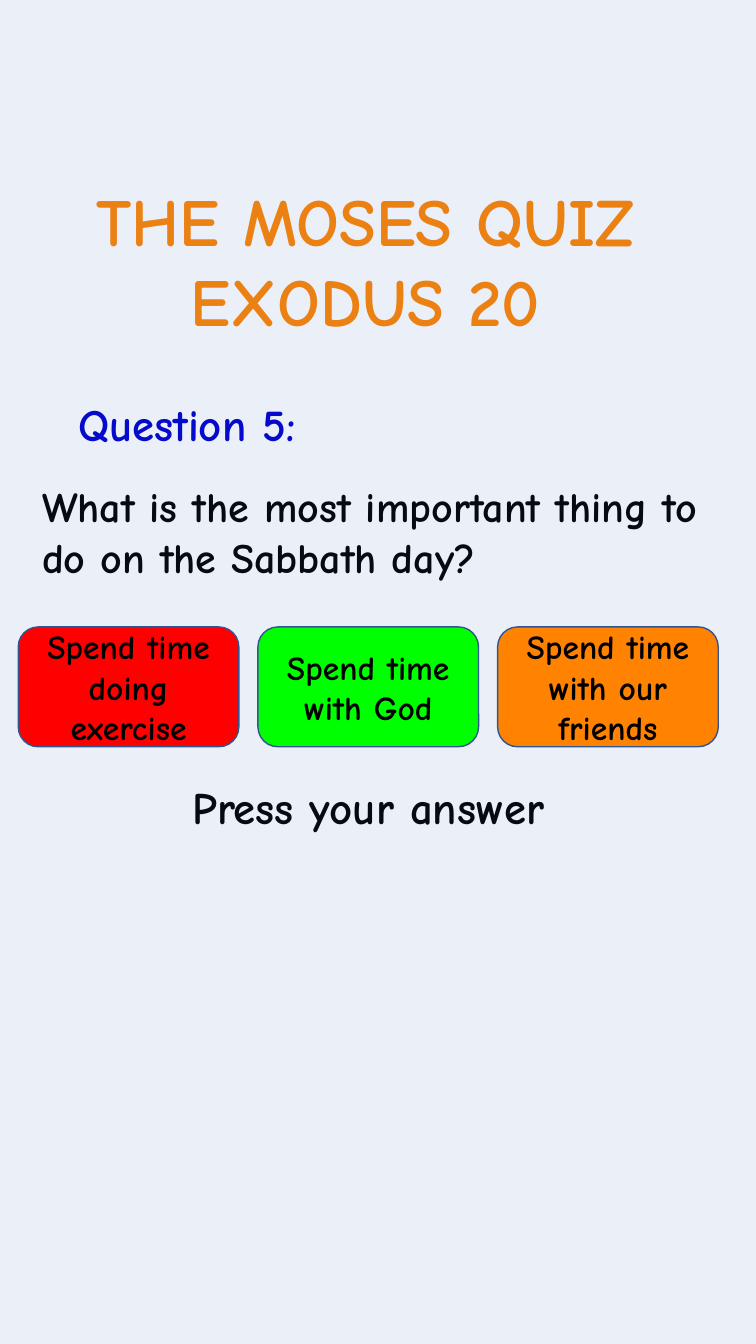
from lxml.etree import SubElement
from pptx import Presentation
from pptx.dml.color import RGBColor
from pptx.enum.shapes import MSO_SHAPE
from pptx.enum.text import MSO_ANCHOR, PP_ALIGN
from pptx.oxml.ns import qn
from pptx.util import Cm, Pt


def color(value):
    return RGBColor.from_string(value)


class QuizSlide:
    font_name = "Comic Neue"
    line_color = "325491"

    def __init__(self, presentation):
        self.slide = presentation.slides.add_slide(presentation.slide_layouts[6])

    def fill_text(self, shape, lines, size, text_color="000000", wrap=True,
                  anchor=MSO_ANCHOR.TOP, paragraph_format=None):
        frame = shape.text_frame
        frame.word_wrap = wrap
        frame.vertical_anchor = anchor
        frame.text = "\n".join(lines)
        font_format = {"name": self.font_name, "size": Pt(size), "bold": True}
        for paragraph in frame.paragraphs:
            for name, value in (paragraph_format or {}).items():
                setattr(paragraph, name, value)
            for run in paragraph.runs:
                for name, value in font_format.items():
                    setattr(run.font, name, value)
                run.font.color.rgb = color(text_color)

    def text(self, box, lines, size, **options):
        shape = self.slide.shapes.add_textbox(*map(Cm, box))
        self.fill_text(shape, lines, size, **options)

    def panel(self, kind, box, fill, opacity=100):
        shape = self.slide.shapes.add_shape(kind, *map(Cm, box))
        shape.shadow.inherit = False
        shape.fill.solid()
        shape.fill.fore_color.rgb = color(fill)
        shape.line.color.rgb = color(self.line_color)
        shape.line.width = Pt(1)
        if opacity < 100:
            fill_color = shape.element.spPr.find(qn("a:solidFill"))[0]
            SubElement(fill_color, qn("a:alpha"), val=str(opacity * 1000))
        return shape

    def answer(self, box, label, fill):
        shape = self.panel(MSO_SHAPE.ROUNDED_RECTANGLE, box, fill)
        self.fill_text(shape, [label], 24, anchor=MSO_ANCHOR.MIDDLE,
                       paragraph_format={"alignment": PP_ALIGN.CENTER})


def main():
    presentation = Presentation()
    presentation.slide_width = Cm(19.05)
    presentation.slide_height = Cm(33.87)
    quiz = QuizSlide(presentation)
    centered = {"alignment": PP_ALIGN.CENTER}

    quiz.text((0.76, 4.39, 17.5, 4.37), ["THE MOSES QUIZ ", "EXODUS 20 "], 48,
              text_color="FF8200", wrap=False, paragraph_format=centered)
    quiz.text((4.6, 19.69, 10.72, 1.83), ["Press your answer"], 32,
              paragraph_format={"alignment": PP_ALIGN.LEFT, "line_spacing": 0.9,
                                "space_before": Pt(7.5)})
    quiz.text((0.81, 11.99, 17.83, 3.02),
              ["What is the most important thing to do on the Sabbath day?"], 30,
              paragraph_format={"alignment": PP_ALIGN.LEFT, "line_spacing": Pt(36),
                                "space_before": Pt(7.5)})
    quiz.text((1.19, 9.88, 7.04, 1.63), ["Question 5:"], 32,
              text_color="0000CC", wrap=False, paragraph_format=centered)
    quiz.panel(MSO_SHAPE.RECTANGLE, (-0.97, -0.79, 20.73, 35), "4472C4", opacity=10)

    answers = [
        ("Spend time doing exercise", "FF0000"),
        ("Spend time with God", "00FF00"),
        ("Spend time with our friends", "FF8200"),
    ]
    for index, (label, fill) in enumerate(answers):
        quiz.answer((0.46 + 6.04 * index, 15.8, 5.56, 3.02), label, fill)

    presentation.save("out.pptx")


if __name__ == "__main__":
    main()
